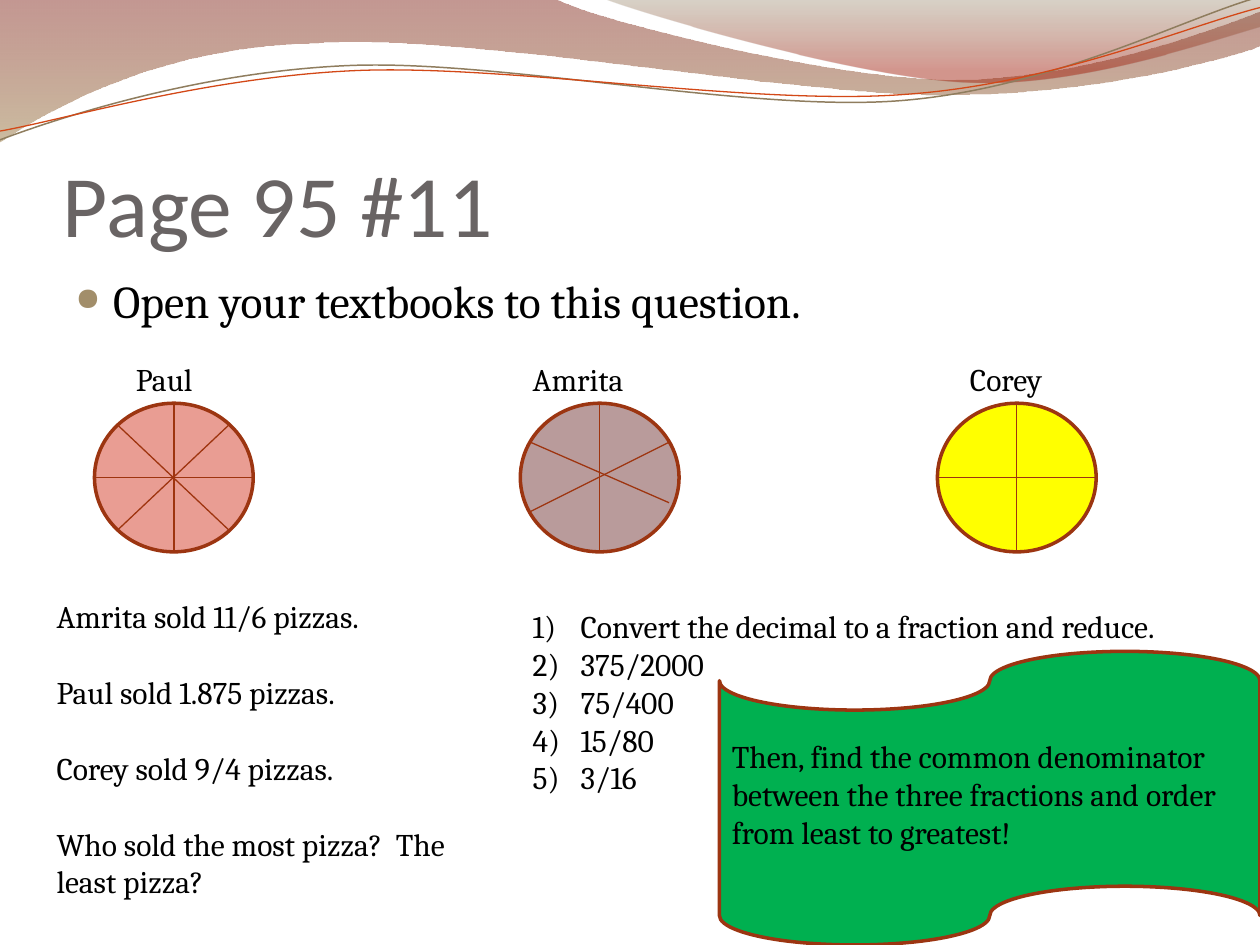
import math

import pptx
import pptx.dml.color
import pptx.enum.shapes
import pptx.enum.text
import pptx.oxml.ns
import pptx.util
from lxml import etree

PX = 9144
RGB = pptx.dml.color.RGBColor
SHAPE = pptx.enum.shapes.MSO_SHAPE
ANCHOR = pptx.enum.text.MSO_ANCHOR
qn = pptx.oxml.ns.qn

BLACK = RGB(0x00, 0x00, 0x00)
GREY = RGB(0x69, 0x64, 0x64)
BULLET = RGB(0xA2, 0x8E, 0x6A)
RUST = RGB(0x9C, 0x35, 0x11)
CUT = RGB(0x9E, 0x34, 0x0F)
PINK = RGB(0xE9, 0x9D, 0x93)
MAUVE = RGB(0xB9, 0x9B, 0x9B)
YELLOW = RGB(0xFF, 0xFF, 0x00)
GREEN = RGB(0x00, 0xB0, 0x50)
BROWN = RGB(0x7C, 0x1A, 0x0E)
TAN = RGB(0xA1, 0x85, 0x52)
KHAKI = RGB(0x7E, 0x6B, 0x48)
RED = RGB(0x9F, 0x17, 0x05)
OLIVE = RGB(0x8F, 0x7D, 0x5E)
ORANGE = RGB(0xD3, 0x48, 0x17)

TITLE = {"name": "Calibri", "size": pptx.util.Pt(50)}
BODY = {"name": "Cambria", "size": pptx.util.Pt(26)}
TEXT = {"name": "Cambria", "size": pptx.util.Pt(18)}
WAVE_TILT = 2.7


def emu(*lengths):
    return [round(v * PX) for v in lengths]


def add_text(s, box, lines, font, color=BLACK, frame=None):
    tf = s.shapes.add_textbox(*emu(*box)).text_frame
    for name, value in {"word_wrap": True, **(frame or {})}.items():
        setattr(tf, name, value)
    for i, line in enumerate(lines):
        p = tf.paragraphs[0] if i == 0 else tf.add_paragraph()
        r = p.add_run()
        r.text = line
        for name, value in font.items():
            setattr(r.font, name, value)
        r.font.color.rgb = color
    return tf


def add_bullets(tf, indent, marks):
    for p in tf.paragraphs:
        pPr = p._p.get_or_add_pPr()
        pPr.set("marL", str(indent * PX))
        pPr.set("indent", str(-indent * PX))
        for tag, attrs in marks:
            mark = etree.SubElement(pPr, qn(tag), attrs)
            if tag == "a:buClr":
                etree.SubElement(mark, qn("a:srgbClr"), val=str(BULLET))


def add_filled(s, kind, box, fill):
    sp = s.shapes.add_shape(kind, *emu(*box))
    sp.shadow.inherit = False
    sp.fill.solid()
    sp.fill.fore_color.rgb = fill
    sp.line.color.rgb = RUST
    sp.line.width = pptx.util.Pt(2)


def add_path(s, start, parts, close):
    points = [q for _, part in parts for q in part]
    builder = s.shapes.build_freeform(*emu(*start))
    builder.add_line_segments([emu(*q) for q in points], close=close)
    sp = builder.convert_to_shape()
    sp.shadow.inherit = False
    steps = iter(list(sp._element.iter(qn("a:lnTo"))))
    for kind, part in parts:
        for i in range(len(part)):
            step = next(steps)
            if kind == "C" and i % 3 == 0:
                curve = etree.Element(qn("a:cubicBezTo"))
                step.addprevious(curve)
            if kind == "C":
                curve.append(step[0])
                step.getparent().remove(step)
    return sp


def add_band(s, start, parts, stops):
    sp = add_path(s, start, parts, True)
    sp.line.fill.background()
    sp.fill.gradient()
    sp.fill.gradient_angle = 270
    for stop, (position, color, _) in zip(sp.fill.gradient_stops, stops):
        stop.position = position
        stop.color.rgb = color
    colors = list(sp._element.spPr.iter(qn("a:srgbClr")))
    for clr, (_, _, opacity) in zip(colors, stops):
        etree.SubElement(clr, qn("a:alpha"), val=str(opacity * 1000))


def add_wave(s, box, points, color, width):
    x, y, w, h = box
    cx, cy = x + w / 2, y + h / 2
    sin, cos = math.sin(math.radians(WAVE_TILT)), math.cos(math.radians(WAVE_TILT))
    flat = [(cx + (a - cx) * cos - (b - cy) * sin,
             cy + (a - cx) * sin + (b - cy) * cos) for a, b in points]
    sp = add_path(s, flat[0], [("C", flat[1:])], False)
    sp.rotation = 360 - WAVE_TILT
    sp.fill.background()
    sp.line.color.rgb = color
    sp.line.width = pptx.util.Pt(width)


def add_header(s, box):
    x, y, w, _ = box
    add_band(s, (x, y), [
        ("L", [(440, -1)]),
        ("C", [(476, 17), (664, 63), (758, 63), (853, 63), (958, 26), (w, 9)]),
        ("L", [(1001, 36)]),
        ("C", [(983, 44), (870, 76), (746, 75), (622, 75), (382, 28), (257, 34),
               (129, 36), (46, 83), (-1, 113)]),
    ], [(0, BROWN, 45), (1, TAN, 55)])
    add_band(s, (479, -1), [
        ("C", [(509, 11), (682, 62), (769, 65), (856, 69), (961, 32), (w, 21)]),
        ("L", [(w, y)]),
    ], [(0, KHAKI, 30), (0.8, RED, 45)])
    add_wave(s, (-2, 22, 1002, 71), [
        (0, 111), (48, 93), (158, 57), (277, 52), (395, 47), (593, 89), (713, 80),
        (833, 71), (938, 15), (998, -2)], OLIVE, 0.85)
    add_wave(s, (-2, 30, 1003, 58), [
        (0, 104), (47, 96), (164, 61), (283, 56), (403, 51), (597, 84), (717, 75),
        (836, 67), (941, 21), (1000, 6)], ORANGE, 0.75)


def add_heading(s, box):
    x, y, w, _ = box
    add_text(s, (x, y, w, 125), ["Page 95 #11"], TITLE, GREY,
             {"vertical_anchor": ANCHOR.BOTTOM, "margin_left": 0,
              "margin_right": 0, "margin_bottom": 0})
    tf = add_text(s, (x, y + 135, w, 480),
                  ["Open your textbooks to this question."], BODY)
    add_bullets(tf, 30, [("a:buClr", {}), ("a:buSzPct", {"val": "70000"}),
                         ("a:buChar", {"char": "●"})])


def add_pizza(s, box, fill, cuts):
    x, y, w, h = box
    add_filled(s, SHAPE.OVAL, box, fill)
    for x1, y1, x2, y2 in [(w // 2, 0, w // 2, h), *cuts]:
        c = s.shapes.add_connector(pptx.enum.shapes.MSO_CONNECTOR.STRAIGHT,
                                   *emu(x + x1, y + y1, x + x2, y + y2))
        c.line.color.rgb = CUT
        c.line.width = pptx.util.Pt(0.75)
        etree.SubElement(c._element.spPr, qn("a:effectLst"))


def add_pizzas(s, box):
    x, y, w, h = box
    across = (0, h // 2, w, h // 2)
    for left, name, name_x, name_w, fill, cuts in [
        (0, "Paul", 23, 165, PINK, [across, (18, 17, 107, 101), (18, 101, 107, 17)]),
        (338, "Amrita", 0, 134, MAUVE, [(8, 31, 118, 79), (8, 86, 118, 31)]),
        (669, "Corey", 16, 84, YELLOW, [across]),
    ]:
        add_pizza(s, (x + left, y, w, h), fill, cuts)
        add_text(s, (x + left + name_x, y - 39, name_w, 40), [name], TEXT)


def add_question(s, box):
    tf = add_text(s, box, [
        "Amrita sold 11/6 pizzas.",
        "Paul sold 1.875 pizzas.",
        "Corey sold 9/4 pizzas.",
        "Who sold the most pizza?  The least pizza?",
    ], TEXT)
    for p in tf.paragraphs[1:]:
        p.space_before = pptx.util.Pt(21.7)


def add_steps(s, box):
    tf = add_text(s, box, ["Convert the decimal to a fraction and reduce.",
                           "375/2000", "75/400", "15/80", "3/16"], TEXT)
    add_bullets(tf, 38, [("a:buAutoNum", {"type": "arabicParenR"})])


def add_hint(s, box):
    x, y, w, _ = box
    add_filled(s, SHAPE.FLOWCHART_PUNCHED_TAPE, box, GREEN)
    add_text(s, (x, y + 63, w + 20, 101),
             ["Then, find the common denominator between the three fractions "
              "and order from least to greatest!"], TEXT)


def main():
    prs = pptx.Presentation()
    prs.slide_width, prs.slide_height = emu(1000, 750)
    s = prs.slides.add_slide(prs.slide_layouts[6])
    add_header(s, (0, 0, 1000, 113))
    add_heading(s, (50, 77, 900, 615))
    add_pizzas(s, (75, 320, 126, 118))
    add_question(s, (35, 469, 339, 252))
    add_steps(s, (413, 477, 543, 162))
    add_hint(s, (571, 517, 429, 233))
    prs.save("out.pptx")


if __name__ == "__main__":
    main()
